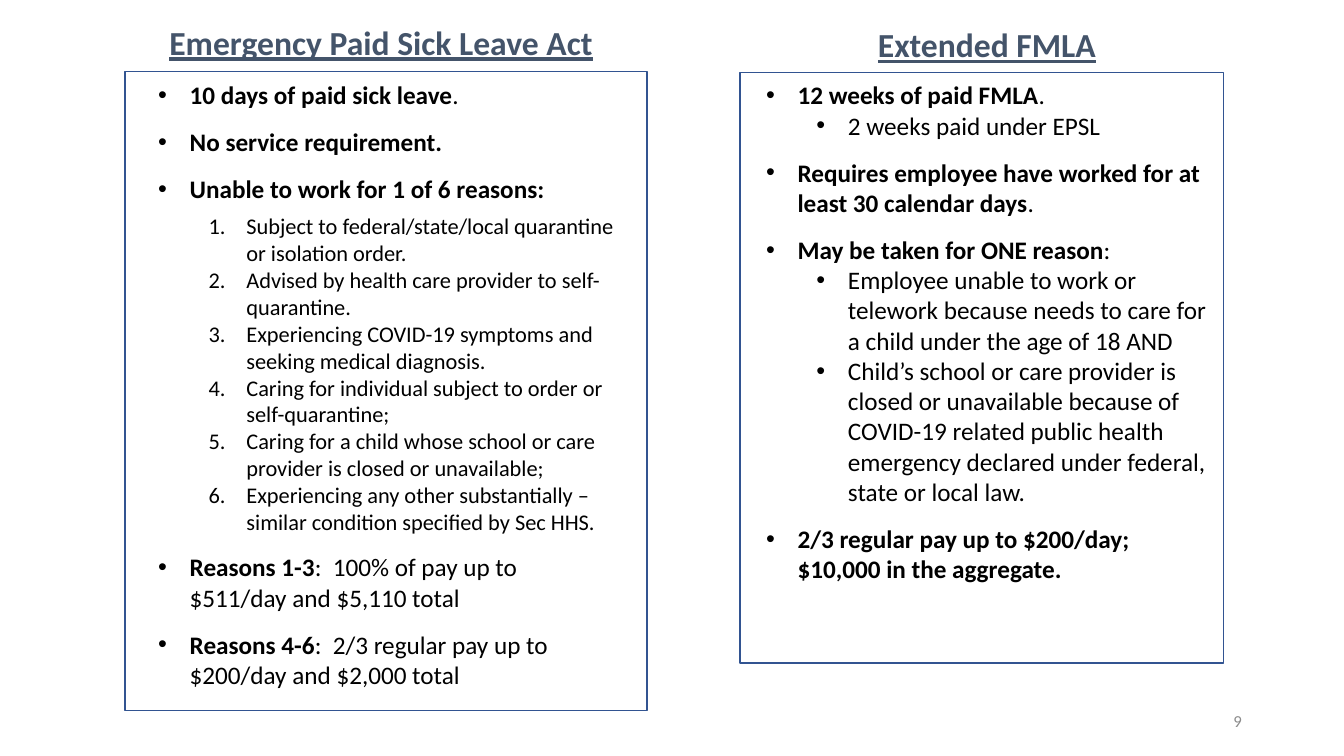
import pptx
import pptx.util
import pptx.dml.color
import pptx.enum.shapes
import pptx.enum.text
import pptx.oxml.ns
import lxml.etree

Pt = pptx.util.Pt
RGB = pptx.dml.color.RGBColor
ALIGN = pptx.enum.text.PP_ALIGN
ANCHOR = pptx.enum.text.MSO_ANCHOR
SLATE = RGB(0x44, 0x54, 0x6A)
BLUE = RGB(0x32, 0x54, 0x91)
GREY = RGB(0x8C, 0x8C, 0x8C)
BLACK = RGB(0, 0, 0)

HEAD = {"name": "Calibri", "size": Pt(24), "bold": True, "underline": True}
PAGE = {"name": "Calibri", "size": Pt(12)}

# Items: level, space after, bold text, plain text
SICK = [
    (0, 6, "10 days of paid sick leave", "."),
    (0, 6, "No service requirement.", ""),
    (0, 6, "Unable to work for 1 of 6 reasons:", ""),
    (1, 0, "", "Subject to federal/state/local quarantine or isolation order."),
    (1, 0, "", "Advised by health care provider to self-quarantine."),
    (1, 0, "", "Experiencing COVID-19 symptoms and seeking medical diagnosis."),
    (1, 0, "", "Caring for individual subject to order or self-quarantine;"),
    (1, 0, "", "Caring for a child whose school or care provider is closed or unavailable;"),
    (1, 6, "", "Experiencing any other substantially –similar condition specified by Sec HHS."),
    (0, 6, "Reasons 1-3", ":  100% of pay up to $511/day and $5,110 total"),
    (0, 0, "Reasons 4-6", ":  2/3 regular pay up to $200/day and $2,000 total"),
]
FMLA = [
    (0, 0, "12 weeks of paid FMLA", "."),
    (1, 6, "", "2 weeks paid under EPSL"),
    (0, 6, "Requires employee have worked for at least 30 calendar days", "."),
    (0, 0, "May be taken for ONE reason", ":"),
    (1, 0, "", "Employee unable to work or telework because needs to care for "
               "a child under the age of 18 AND"),
    (1, 6, "", "Child’s school or care provider is closed or unavailable because of "
               "COVID-19 related public health emergency declared under federal, "
               "state or local law."),
    (0, 0, "2/3 regular pay up to $200/day; $10,000 in the aggregate.", ""),
]


def place(shape, spot):
    for side, size in zip(("left", "top", "width", "height"), spot):
        setattr(shape, side, Pt(size))


def label(shape, text, look, color, align):
    para = shape.text_frame.paragraphs[0]
    para.alignment = align
    run = para.add_run()
    run.text = text
    for key, val in look.items():
        setattr(run.font, key, val)
    run.font.color.rgb = color


deck = pptx.Presentation()
deck.slide_width, deck.slide_height = Pt(960), Pt(540)
slide = deck.slides.add_slide(deck.slide_layouts[3])
title, left, right = slide.placeholders

# Headings
place(title, (112.3, 12.2, 319.7, 36))
title.text_frame.word_wrap = False
title.text_frame.auto_size = pptx.enum.text.MSO_AUTO_SIZE.NONE
label(title, "Emergency Paid Sick Leave Act", HEAD, SLATE, ALIGN.CENTER)

head = slide.shapes.add_textbox(Pt(554.4), Pt(10.1), Pt(301), Pt(45.4))
head.text_frame.word_wrap = True
for side in ("left", "top", "right", "bottom"):
    setattr(head.text_frame, "margin_" + side, Pt(7.2))
label(head, "Extended FMLA", HEAD, SLATE, ALIGN.CENTER)

# Frames around the two lists
for spot in ((89.3, 51.1, 373, 456.5), (528.5, 51.8, 345.6, 421.9)):
    frame = slide.shapes.add_shape(
        pptx.enum.shapes.MSO_SHAPE.RECTANGLE, *[Pt(n) for n in spot])
    frame.shadow.inherit = False
    frame.fill.background()
    frame.line.color.rgb = BLUE
    frame.line.width = Pt(1)

# Lists: box, place, items, sub-item indent, hang, size, bullet tag, bullet value
LISTS = [
    (left, (105.8, 53.3, 343.4, 454), SICK, 63, 27, 16,
     "a:buAutoNum", ("type", "arabicPeriod")),
    (right, (540, 53.3, 329, 420), FMLA, 58.5, 22.5, 18,
     "a:buChar", ("char", "•")),
]
for box, spot, items, inset, hang, small, tag, mark in LISTS:
    place(box, spot)
    body = box.text_frame
    body.word_wrap = True
    body.auto_size = pptx.enum.text.MSO_AUTO_SIZE.NONE
    body.vertical_anchor = ANCHOR.TOP
    for num, (level, after, bold, plain) in enumerate(items):
        para = body.add_paragraph() if num else body.paragraphs[0]
        para.level = level
        para.space_before = Pt(0 if level or not num else 6)
        para.space_after = Pt(after)
        props = para._p.get_or_add_pPr()
        props.set("marL", str(Pt(inset if level else 22.5)))
        props.set("indent", str(-Pt(hang if level else 22.5)))
        kind, (key, val) = (tag, mark) if level else ("a:buChar", ("char", "•"))
        font = lxml.etree.SubElement(props, pptx.oxml.ns.qn("a:buFont"))
        font.set("typeface", "Calibri" if kind == "a:buAutoNum" else "Arial")
        lxml.etree.SubElement(props, pptx.oxml.ns.qn(kind)).set(key, val)
        for text, heavy in ((bold, True), (plain, False)):
            if text:
                run = para.add_run()
                run.text = text
                look = {"name": "Calibri", "bold": heavy,
                        "size": Pt(small if level else 18)}
                for key, val in look.items():
                    setattr(run.font, key, val)
                run.font.color.rgb = BLACK

# Page number
page = slide.shapes.add_textbox(Pt(678.2), Pt(500.4), Pt(216), Pt(28.8))
page.text_frame.word_wrap = True
page.text_frame.vertical_anchor = ANCHOR.MIDDLE
label(page, "9", PAGE, GREY, ALIGN.RIGHT)

deck.save("out.pptx")
